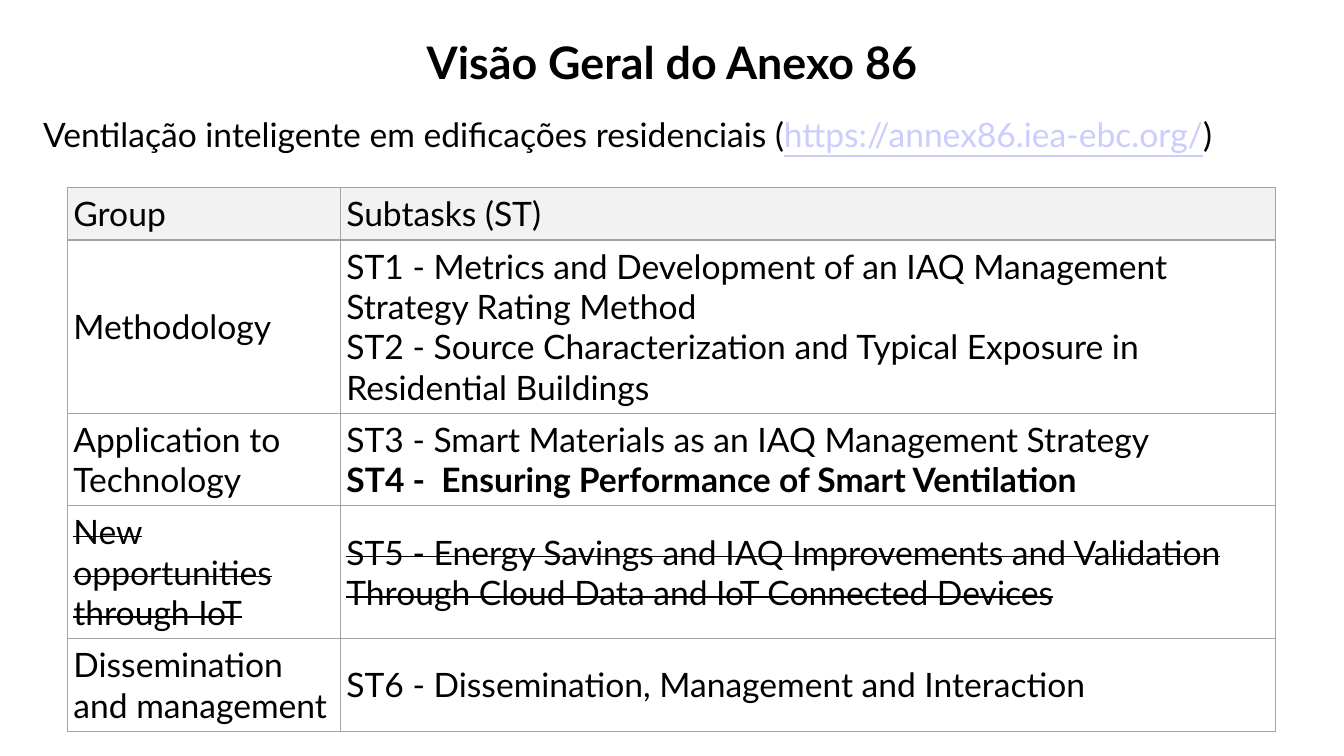
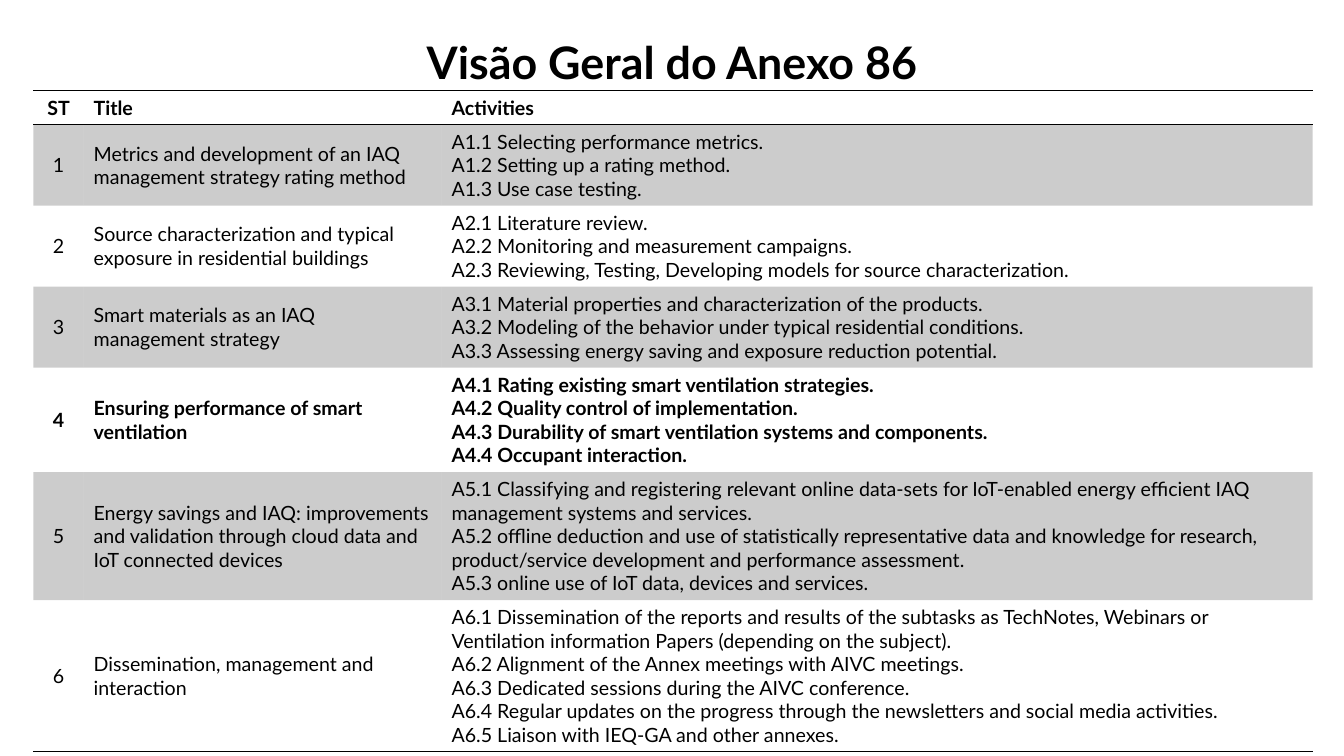
from dataclasses import dataclass

from lxml.etree import SubElement
from pptx import Presentation
from pptx.dml.color import RGBColor
from pptx.enum.text import MSO_ANCHOR, MSO_AUTO_SIZE, PP_ALIGN
from pptx.oxml import parse_xml
from pptx.oxml.ns import nsdecls, qn
from pptx.util import Cm, Pt


@dataclass(frozen=True)
class Theme:
    font: str = "Lato"
    text: str = "000000"
    link: str = "CCCCFF"
    grid: str = "A3A3A3"
    header_fill: str = "F2F2F2"
    band_fill: str = "000000"
    band_opacity: int = 20
    title_size: int = 32
    body_size: int = 24
    small_size: int = 14
    line_spacing: float = 1.2
    border: float = 1
    plain_table: str = "{2D5ABB26-0587-4C30-8999-92F81FD0307C}"


THEME = Theme()


@dataclass(frozen=True)
class Box:
    """Lengths in centimetres."""
    left: float
    top: float
    width: float
    height: float = 0


@dataclass(frozen=True)
class Run:
    text: str
    bold: bool = False
    strike: bool = False
    link: bool = False


@dataclass(frozen=True)
class Row:
    """Cells hold lists of runs, one paragraph each; lines is the tallest cell."""
    lines: int
    cells: list


@dataclass(frozen=True)
class TableStyle:
    size: int
    margin_x: float
    margin_y: float
    centered_columns: tuple = ()


TITLE = "Visão Geral do Anexo 86"
TITLE_BOX = Box(0.84, 0.74, 32.2, 1.63)
SUBTITLE_BOX = Box(0.84, 2.74, 32.2, 1.27)
SUBTITLE = [
    Run("Ventilação inteligente em edificações residenciais ("),
    Run("https://annex86.iea-ebc.org/", link=True),
    Run(")"),
]

GROUP_BOX = Box(1.7, 4.73, 30.45)
GROUP_SHARES = (6.88, 23.57)
GROUP_STYLE = TableStyle(THEME.body_size, 0.15, 0.15)
GROUP_ROWS = [
    Row(1, [[Run("Group")], [Run("Subtasks (ST)")]]),
    Row(4, [[Run("Methodology")],
            [Run("ST1 - Metrics and Development of an IAQ Management Strategy Rating Method"),
             Run("ST2 - Source Characterization and Typical Exposure in Residential Buildings")]]),
    Row(2, [[Run("Application to Technology")],
            [Run("ST3 - Smart Materials as an IAQ Management Strategy"),
             Run("ST4 -  Ensuring Performance of Smart Ventilation", bold=True)]]),
    Row(3, [[Run("New opportunities through IoT", strike=True)],
            [Run("ST5 - Energy Savings and IAQ Improvements and Validation Through "
                 "Cloud Data and IoT Connected Devices", strike=True)]]),
    Row(2, [[Run("Dissemination and management")],
            [Run("ST6 - Dissemination, Management and Interaction")]]),
]

ACTIVITY_BOX = Box(0.84, 2.29, 32.24)
ACTIVITY_SHARES = (1.27, 9.02, 21.95)
ACTIVITY_STYLE = TableStyle(THEME.small_size, 0.25, 0.13, centered_columns=(0,))
ACTIVITY_HEADER = ("ST", "Title", ["Activities"])
HIGHLIGHTED_SUBTASK = 4
# Lines, title, activities
SUBTASKS = [
    (3, "Metrics and development of an IAQ management strategy rating method",
     ["A1.1 Selecting performance metrics.",
      "A1.2 Setting up a rating method.",
      "A1.3 Use case testing."]),
    (3, "Source characterization and typical exposure in residential buildings",
     ["A2.1 Literature review.",
      "A2.2 Monitoring and measurement campaigns.",
      "A2.3 Reviewing, Testing, Developing models for source characterization."]),
    (3, "Smart materials as an IAQ management strategy",
     ["A3.1 Material properties and characterization of the products.",
      "A3.2 Modeling of the behavior under typical residential conditions.",
      "A3.3 Assessing energy saving and exposure reduction potential."]),
    (4, "Ensuring performance of smart ventilation",
     ["A4.1 Rating existing smart ventilation strategies.",
      "A4.2 Quality control of implementation.",
      "A4.3 Durability of smart ventilation systems and components.",
      "A4.4 Occupant interaction."]),
    (5, "Energy savings and IAQ: improvements and validation through cloud data "
        "and IoT connected devices",
     ["A5.1 Classifying and registering relevant online data-sets for IoT-enabled "
      "energy efficient IAQ management systems and services.",
      "A5.2 offline deduction and use of statistically representative data and knowledge "
      "for research, product/service development and performance assessment.",
      "A5.3 online use of IoT data, devices and services."]),
    (6, "Dissemination, management and interaction",
     ["A6.1 Dissemination of the reports and results of the subtasks as TechNotes, "
      "Webinars or Ventilation information Papers (depending on the subject).",
      "A6.2 Alignment of the Annex meetings with AIVC meetings.",
      "A6.3 Dedicated sessions during the AIVC conference.",
      "A6.4 Regular updates on the progress through the newsletters and social media activities.",
      "A6.5 Liaison with IEQ-GA and other annexes."]),
]


# Text
def add_run(paragraph, content, size):
    run = paragraph.add_run()
    run.text = content.text
    font = run.font
    font.name = THEME.font
    font.size = Pt(size)
    font.bold = content.bold
    font.underline = content.link
    font.color.rgb = RGBColor.from_string(THEME.link if content.link else THEME.text)
    if content.strike:
        run._r.get_or_add_rPr().set("strike", "sngStrike")


def add_text(slide, box, runs, size, alignment=PP_ALIGN.LEFT, spacing=0):
    shape = slide.shapes.add_textbox(Cm(box.left), Cm(box.top), Cm(box.width), Cm(box.height))
    frame = shape.text_frame
    frame.word_wrap = True
    frame.auto_size = MSO_AUTO_SIZE.SHAPE_TO_FIT_TEXT
    paragraph = frame.paragraphs[0]
    paragraph.alignment = alignment
    paragraph.space_before = paragraph.space_after = Pt(spacing)
    for content in runs:
        add_run(paragraph, content, size)


def add_title(slide):
    add_text(slide, TITLE_BOX, [Run(TITLE, bold=True)], THEME.title_size, PP_ALIGN.CENTER)


# Tables
def set_borders(cell, sides, color):
    """Draw the given sides, a string made of L, R, T and B in that order."""
    properties = cell._tc.get_or_add_tcPr()
    for position, side in enumerate(sides):
        properties.insert(position, parse_xml(
            f'<a:ln{side} {nsdecls("a")} w="{Pt(THEME.border)}"><a:solidFill>'
            f'<a:srgbClr val="{color}"/></a:solidFill></a:ln{side}>'))


def fill_cell(cell, color, opacity=100):
    cell.fill.solid()
    cell.fill.fore_color.rgb = RGBColor.from_string(color)
    if opacity < 100:
        color_element = cell._tc.tcPr.find(".//" + qn("a:srgbClr"))
        SubElement(color_element, qn("a:alpha")).set("val", str(opacity * 1000))


def write_cell(cell, contents, style, alignment):
    cell.vertical_anchor = MSO_ANCHOR.MIDDLE
    cell.margin_left = cell.margin_right = Cm(style.margin_x)
    cell.margin_top = cell.margin_bottom = Cm(style.margin_y)
    cell.fill.background()
    frame = cell.text_frame
    for index, content in enumerate(contents):
        paragraph = frame.add_paragraph() if index else frame.paragraphs[0]
        paragraph.alignment = alignment
        add_run(paragraph, content, style.size)


def add_plain_table(slide, box, shares, rows, style):
    """Columns share the box width; row heights follow from their line counts."""
    line_height = Pt(style.size * THEME.line_spacing)
    heights = [row.lines * line_height + 2 * Cm(style.margin_y) for row in rows]
    table = slide.shapes.add_table(len(rows), len(shares), Cm(box.left), Cm(box.top),
                                   Cm(box.width), sum(heights)).table
    table.first_row = table.horz_banding = False
    table._tbl.tblPr.find(qn("a:tableStyleId")).text = THEME.plain_table
    for column, share in zip(table.columns, shares):
        column.width = Cm(box.width * share / sum(shares))
    for row_index, row in enumerate(rows):
        table.rows[row_index].height = heights[row_index]
        for column_index, contents in enumerate(row.cells):
            centered = column_index in style.centered_columns
            write_cell(table.cell(row_index, column_index), contents, style,
                       PP_ALIGN.CENTER if centered else PP_ALIGN.LEFT)
    return table


def add_group_table(slide, box):
    table = add_plain_table(slide, box, GROUP_SHARES, GROUP_ROWS, GROUP_STYLE)
    for cell in table.iter_cells():
        set_borders(cell, "LRTB", THEME.grid)
    for cell in table.rows[0].cells:
        fill_cell(cell, THEME.header_fill)


def activity_row(lines, number, title, activities, bold):
    return Row(lines, [[Run(number, bold)], [Run(title, bold)],
                       [Run(activity, bold) for activity in activities]])


def add_activity_table(slide, box):
    rows = [activity_row(1, *ACTIVITY_HEADER, True)]
    for number, (lines, title, activities) in enumerate(SUBTASKS, start=1):
        rows.append(activity_row(lines, str(number), title, activities,
                                 number == HIGHLIGHTED_SUBTASK))
    table = add_plain_table(slide, box, ACTIVITY_SHARES, rows, ACTIVITY_STYLE)
    for row_index, row in enumerate(table.rows):
        for cell in row.cells:
            if row_index % 2:
                fill_cell(cell, THEME.band_fill, THEME.band_opacity)
            if row_index == 0:
                set_borders(cell, "TB", THEME.text)
            elif row_index == len(SUBTASKS):
                set_borders(cell, "B", THEME.text)


# Slides
def add_slide(presentation):
    slide = presentation.slides.add_slide(presentation.slide_layouts[6])
    add_title(slide)
    return slide


def build_group_slide(presentation):
    slide = add_slide(presentation)
    add_text(slide, SUBTITLE_BOX, SUBTITLE, THEME.body_size, spacing=12)
    add_group_table(slide, GROUP_BOX)


def build_activity_slide(presentation):
    add_activity_table(add_slide(presentation), ACTIVITY_BOX)


def main():
    presentation = Presentation()
    presentation.slide_width = Cm(33.87)
    presentation.slide_height = Cm(19.05)
    build_group_slide(presentation)
    build_activity_slide(presentation)
    presentation.save("out.pptx")


if __name__ == "__main__":
    main()
